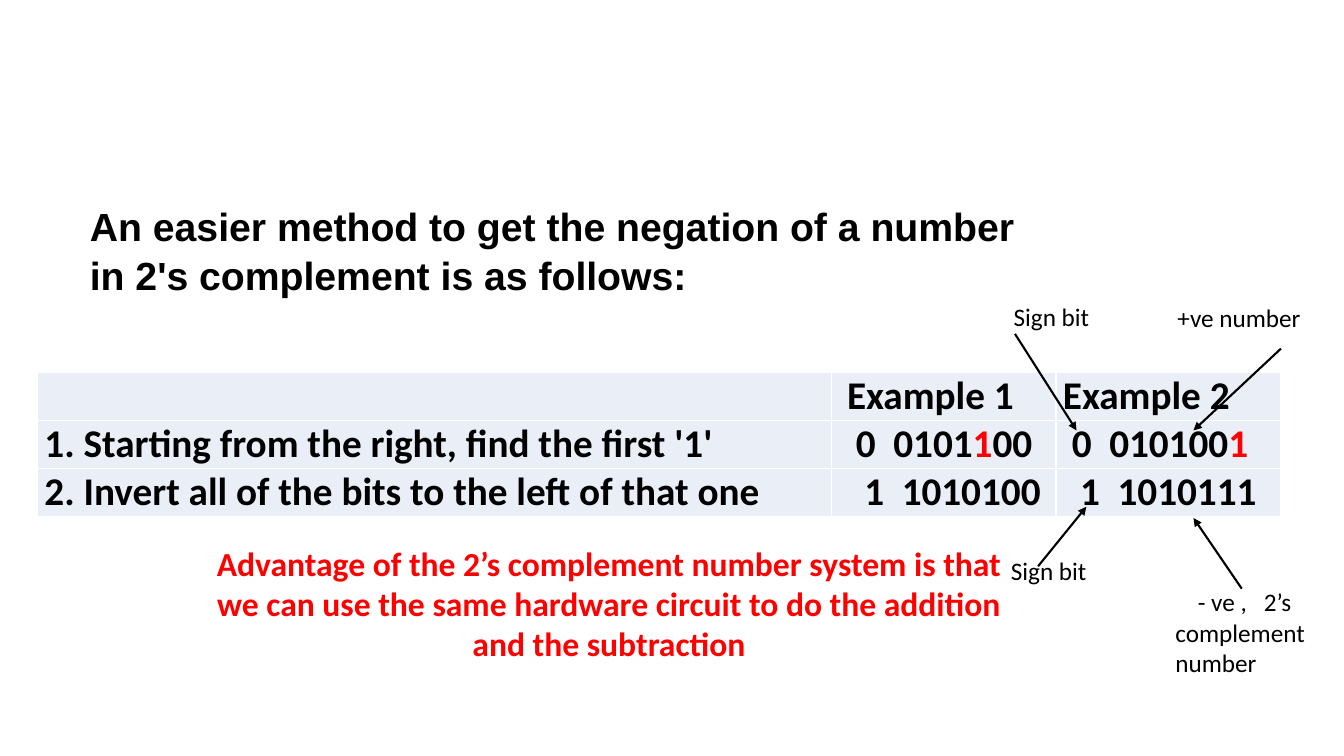
from lxml.etree import SubElement
from pptx import Presentation
from pptx.dml.color import RGBColor
from pptx.enum.shapes import MSO_CONNECTOR
from pptx.enum.text import MSO_ANCHOR, MSO_AUTO_SIZE, PP_ALIGN
from pptx.oxml import parse_xml
from pptx.oxml.ns import nsdecls, qn
from pptx.util import Pt

BLACK = RGBColor(0x00, 0x00, 0x00)
RED = RGBColor(0xFF, 0x00, 0x00)
WHITE = RGBColor(0xFF, 0xFF, 0xFF)
CELL_BLUE = RGBColor(0xEA, 0xEF, 0xF7)


def add_text(paragraph, text, size=18, font="Calibri", color=BLACK, bold=False, spacing=0):
    """Append one formatted run; spacing widens its characters, in points."""
    run = paragraph.add_run()
    run.text = text
    run.font.size = Pt(size)
    run.font.name = font
    run.font.color.rgb = color
    run.font.bold = bold
    if spacing:
        run.font._element.set("spc", str(round(spacing * 100)))


class SlideBuilder:
    table_size = 28
    space_width = 6.3
    cell_margin = 5

    def __init__(self, presentation):
        self.slide = presentation.slides.add_slide(presentation.slide_layouts[5])

    def title(self, lines, left, top, width, height):
        shape = self.slide.shapes.title
        shape.left, shape.top, shape.width, shape.height = map(Pt, (left, top, width, height))
        frame = shape.text_frame
        frame.auto_size = MSO_AUTO_SIZE.NONE
        frame.vertical_anchor = MSO_ANCHOR.TOP
        for index, line in enumerate(lines):
            paragraph = frame.paragraphs[0] if index == 0 else frame.add_paragraph()
            paragraph.alignment = PP_ALIGN.LEFT
            paragraph.space_before = Pt(0)
            paragraph.space_after = Pt(1.5)
            add_text(paragraph, line, size=28, font="Arial", bold=True)

    def text_box(self, runs, left, top, width, height, align=PP_ALIGN.LEFT, wrap=True, indent=0):
        """Each run is a text and its format."""
        shape = self.slide.shapes.add_textbox(Pt(left), Pt(top), Pt(width), Pt(height))
        frame = shape.text_frame
        frame.word_wrap = wrap
        frame.auto_size = MSO_AUTO_SIZE.SHAPE_TO_FIT_TEXT
        paragraph = frame.paragraphs[0]
        paragraph.alignment = align
        if indent:
            paragraph._p.get_or_add_pPr().set("indent", str(Pt(indent)))
        for text, style in runs:
            add_text(paragraph, text, **style)

    def arrow(self, start, end):
        line = self.slide.shapes.add_connector(
            MSO_CONNECTOR.STRAIGHT, *map(Pt, (*start, *end)))
        line.line.color.rgb = BLACK
        line.line.width = Pt(1.5)
        SubElement(line.line._get_or_add_ln(), qn("a:tailEnd"), type="triangle")
        SubElement(line._element.spPr, qn("a:effectLst"))

    def table(self, rows, left, top, column_widths, row_height):
        table = self.slide.shapes.add_table(
            len(rows), len(column_widths), Pt(left), Pt(top),
            Pt(sum(column_widths)), Pt(row_height * len(rows))).table
        table.first_row = table.horz_banding = False
        for column, width in zip(table.columns, column_widths):
            column.width = Pt(width)
        for row, contents in zip(table.rows, rows):
            row.height = Pt(row_height)
            for cell, content in zip(row.cells, contents):
                self.fill_cell(cell, *content)

    def fill_cell(self, cell, runs, indent=0, align=PP_ALIGN.LEFT):
        """Indent counts widths of a space."""
        cell.fill.solid()
        cell.fill.fore_color.rgb = CELL_BLUE
        cell.vertical_anchor = MSO_ANCHOR.MIDDLE
        cell.margin_left = Pt(self.cell_margin + indent * self.space_width)
        cell.margin_right = Pt(self.cell_margin)
        cell.margin_top = cell.margin_bottom = 0
        for index, side in enumerate(("lnL", "lnR", "lnT", "lnB")):
            border = parse_xml(
                f'<a:{side} {nsdecls("a")} w="{Pt(1)}"><a:solidFill>'
                f'<a:srgbClr val="{WHITE}"/></a:solidFill></a:{side}>')
            cell._tc.get_or_add_tcPr().insert(index, border)
        paragraph = cell.text_frame.paragraphs[0]
        paragraph.alignment = align
        for text, style in runs:
            add_text(paragraph, text, size=self.table_size, bold=True, **style)


def binary(sign, before, first_one="", after=""):
    """Runs of a signed number, with its first '1' in red."""
    runs = [(sign, {}), (" ", {"spacing": SlideBuilder.space_width}), (before, {})]
    if first_one:
        runs.append((first_one, {"color": RED}))
    if after:
        runs.append((after, {}))
    return runs


def main():
    presentation = Presentation()
    presentation.slide_width, presentation.slide_height = Pt(960), Pt(540)
    builder = SlideBuilder(presentation)

    # Heading
    builder.title(["An easier method to get the negation of a number",
                   "in 2's complement is as follows:"], 57, 141, 756, 74)

    # Worked examples
    builder.table([
        [([],), ([("Example 1", {})], 1), ([("Example 2", {})],)],
        [([("1. Starting from the right, find the first '1'", {})],),
         (binary("0", "0101", "1", "00"), 2),
         (binary("0", "010100", "1"), 1)],
        [([("2. Invert all of the bits to the left of that one", {})],),
         (binary("1", "1010100"), 2, PP_ALIGN.CENTER),
         (binary("1", "1010111"), 0, PP_ALIGN.CENTER)],
    ], 26.8, 266, [567, 160.5, 160.5], 33.6)

    # Conclusion
    builder.text_box(
        [("Advantage of the 2’s complement number system is that we can use the same "
          "hardware circuit to do the addition and the subtraction",
          {"size": 24, "color": RED, "bold": True})],
        131, 384, 608, 94, align=PP_ALIGN.CENTER)

    # Labels
    builder.text_box([("+ve number", {})], 834, 212.5, 108, 29)
    builder.text_box([("- ve ,", {}), (" ", {"spacing": 8}), ("2’s complement number", {})],
                     832.5, 415.5, 108, 73, indent=16)
    for left, top in ((717, 212), (715, 393)):
        builder.text_box([("Sign bit", {})], left, top, 69, 29, wrap=False)

    # Arrows from labels to numbers
    for start, end in (((915, 249), (852.5, 307.5)), ((887, 420.5), (852.5, 370)),
                       ((725, 238.5), (769, 307.5)), ((741.5, 404.5), (776, 362))):
        builder.arrow(start, end)

    presentation.save("out.pptx")


if __name__ == "__main__":
    main()
